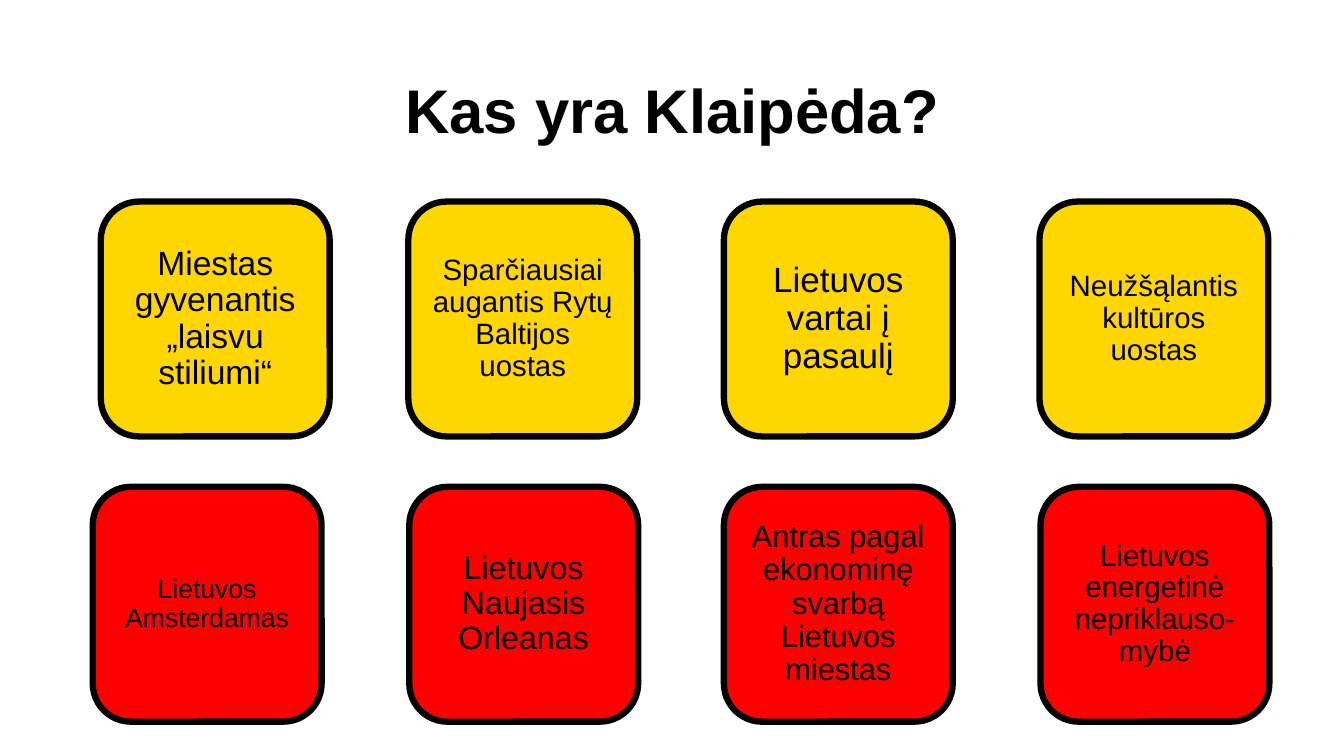
from dataclasses import dataclass

from pptx import Presentation
from pptx.dml.color import RGBColor
from pptx.enum.shapes import MSO_SHAPE
from pptx.enum.text import MSO_ANCHOR, PP_ALIGN
from pptx.util import Inches, Pt

ROUNDED = MSO_SHAPE.ROUNDED_RECTANGLE
CENTER = PP_ALIGN.CENTER
MIDDLE = MSO_ANCHOR.MIDDLE
TITLE_ONLY = 5


@dataclass(frozen=True)
class Theme:
    font: str = "Arial"
    black: RGBColor = RGBColor(0, 0, 0)
    white: RGBColor = RGBColor(255, 255, 255)
    yellow: RGBColor = RGBColor(0xFF, 0xD7, 0)
    red: RGBColor = RGBColor(0xFF, 0, 0)
    title_size: int = 44
    huge: int = 25
    large: int = 24
    upper: int = 23
    medium: int = 22
    normal: int = 21
    small: int = 19
    border: float = 4.5


THEME = Theme()
CARD_WIDTH, CARD_HEIGHT = 2.27, 2.33
COLUMN_STEP = 3.13

# Each card: wording, type size and optional shift to the right
YELLOW_CARDS = [
    ("Miestas gyvenantis „laisvu stiliumi“", THEME.large, 0.08),
    ("Sparčiausiai augantis Rytų Baltijos uostas", THEME.normal, 0),
    ("Lietuvos vartai į pasaulį", THEME.huge, 0),
    ("Neužšąlantis kultūros uostas", THEME.normal, 0),
]
RED_CARDS = [
    ("Lietuvos Amsterdamas", THEME.small, 0),
    ("Lietuvos Naujasis Orleanas", THEME.upper, 0.01),
    ("Antras pagal ekonominę svarbą Lietuvos miestas", THEME.medium, 0),
    ("Lietuvos energetinė nepriklauso- mybė", THEME.normal, 0.01),
]


def write_text(shape, text, size, bold=False, space_before=0):
    frame = shape.text_frame
    frame.word_wrap = True
    frame.vertical_anchor = MIDDLE
    paragraph = frame.paragraphs[0]
    paragraph.text = text
    paragraph.alignment = CENTER
    paragraph.line_spacing = 0.9
    paragraph.space_before = Pt(space_before)
    paragraph.font.name = THEME.font
    paragraph.font.size = Pt(size)
    paragraph.font.bold = bold
    paragraph.font.color.rgb = THEME.black


def add_title(slide, text, left, top, width, height):
    title = slide.shapes.title
    title.left, title.top = Inches(left), Inches(top)
    title.width, title.height = Inches(width), Inches(height)
    write_text(title, text, THEME.title_size, bold=True)


def add_card(slide, text, size, color, left, top):
    card = slide.shapes.add_shape(
        ROUNDED, Inches(left), Inches(top), Inches(CARD_WIDTH), Inches(CARD_HEIGHT)
    )
    card.shadow.inherit = False
    card.fill.solid()
    card.fill.fore_color.rgb = color
    card.line.color.rgb = THEME.black
    card.line.width = Pt(THEME.border)
    write_text(card, text, size, space_before=10)


def add_card_row(slide, cards, color, left, top):
    for column, (text, size, shift) in enumerate(cards):
        add_card(slide, text, size, color, left + column * COLUMN_STEP + shift, top)


def main():
    presentation = Presentation()
    presentation.slide_width = Inches(13.33)
    presentation.slide_height = Inches(7.5)
    slide = presentation.slides.add_slide(presentation.slide_layouts[TITLE_ONLY])
    slide.background.fill.solid()
    slide.background.fill.fore_color.rgb = THEME.white

    # Title
    add_title(slide, "Kas yra Klaipėda?", 0.92, 0.4, 11.5, 1.45)

    # Two rows of cards
    add_card_row(slide, YELLOW_CARDS, THEME.yellow, 0.92, 2)
    add_card_row(slide, RED_CARDS, THEME.red, 0.92, 4.83)

    presentation.save("out.pptx")


if __name__ == "__main__":
    main()
